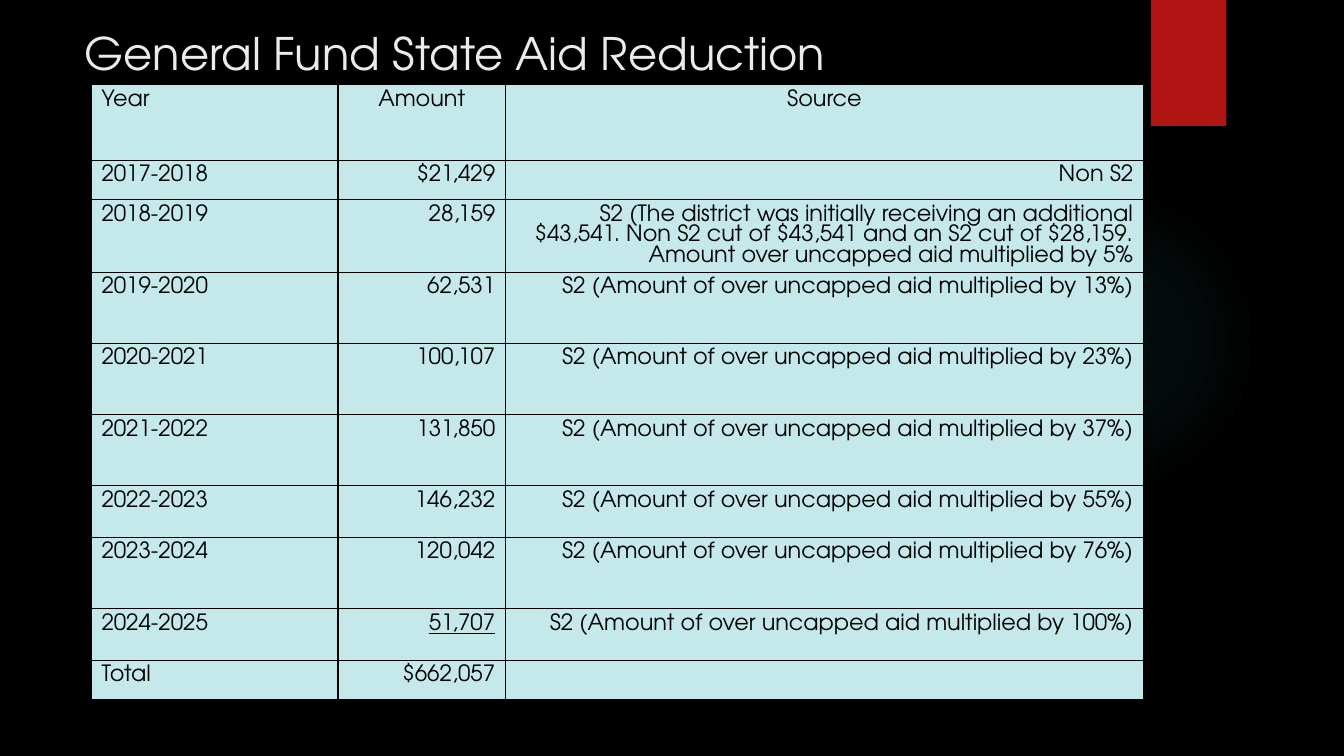
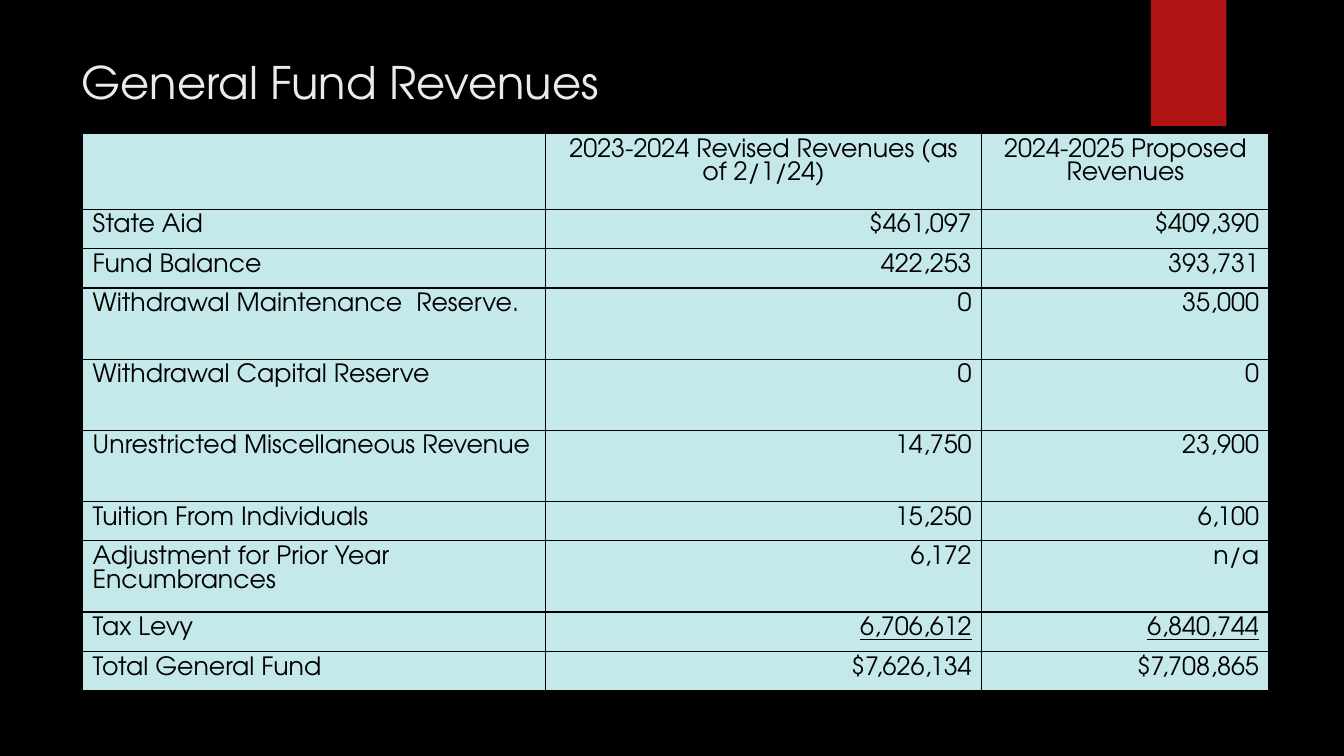
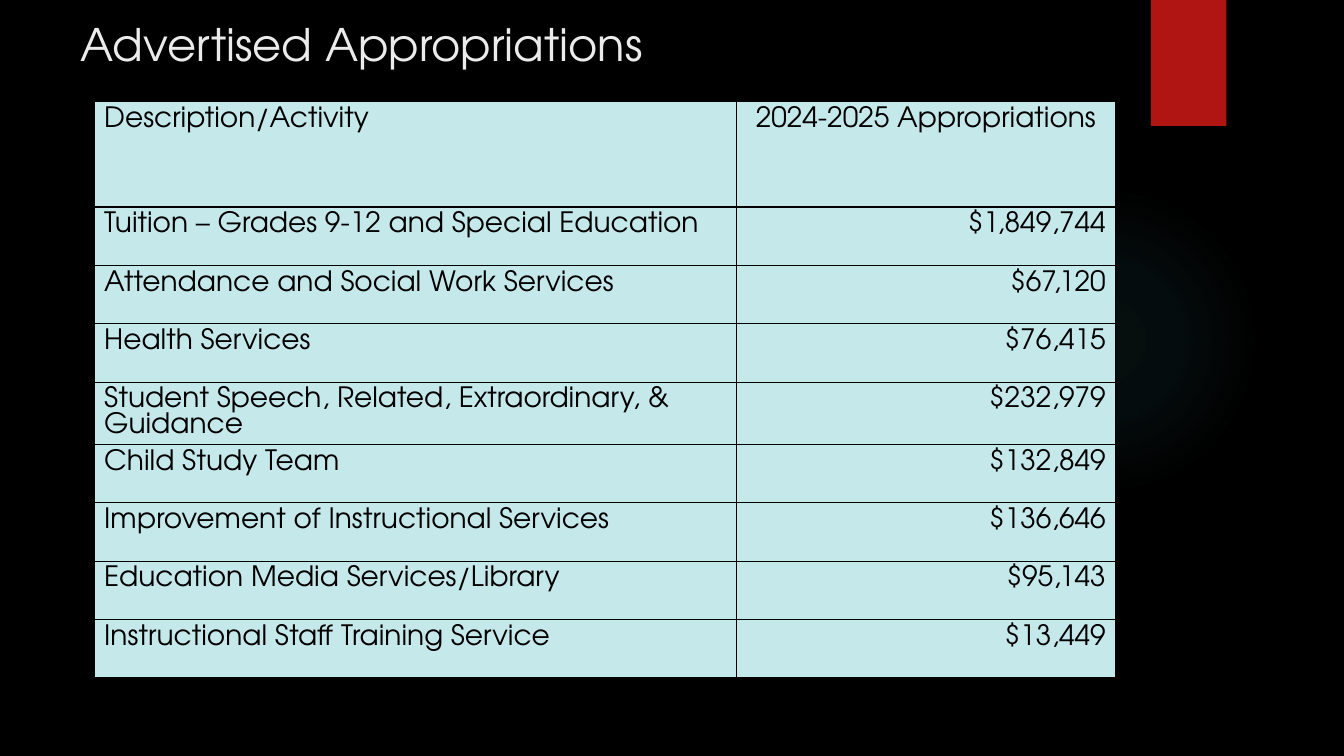
from pptx import Presentation
from pptx.dml.color import RGBColor
from pptx.enum.shapes import MSO_SHAPE
from pptx.enum.text import MSO_ANCHOR, MSO_AUTO_SIZE, PP_ALIGN
from pptx.oxml import parse_xml
from pptx.oxml.ns import nsdecls
from pptx.util import Pt

COLORS = {
    "background": "000000",
    "title": "EBEBEB",
    "ribbon": "B01513",
    "glow": "50B9C1",
    "cell": "C5E8EA",
    "ink": "000000",
}
FONT = "TeX Gyre Adventor"
GLOW_STOPS = [(0, 7), (36, 6), (69, 0), (100, 0)]


def format_text(paragraph, size, color, alignment):
    paragraph.alignment = alignment
    for run in paragraph.runs:
        run.font.name = FONT
        run.font.size = Pt(size)
        run.font.color.rgb = RGBColor.from_string(COLORS[color])


def add_borders(cell):
    properties = cell._tc.get_or_add_tcPr()
    for position, side in enumerate(("lnL", "lnR", "lnT", "lnB")):
        properties.insert(position, parse_xml(
            f'<a:{side} {nsdecls("a")} w="{Pt(1)}"><a:solidFill>'
            f'<a:srgbClr val="{COLORS["ink"]}"/></a:solidFill></a:{side}>'))


reductions = [
    ("2019-2020", "62,531", 13),
    ("2020-2021", "100,107", 23),
    ("2021-2022", "131,850", 37),
    ("2022-2023", "146,232", 55),
    ("2023-2024", "120,042", 76),
    ("2024-2025", "51,707", 100),
]
state_aid = [
    ("Year", "Amount", "Source"),
    ("2017-2018", "$21,429", "Non S2"),
    ("2018-2019", "28,159",
     "S2 (The district was initially receiving an additional $43,541. "
     "Non S2 cut of $43,541 and an S2 cut of $28,159. "
     "Amount over uncapped aid multiplied by 5%"),
    *[(year, amount, f"S2 (Amount of over uncapped aid multiplied by {percent}%)")
      for year, amount, percent in reductions],
    ("Total", "$662,057", ""),
]
revenues = [
    ("", "2023-2024 Revised Revenues (as of 2/1/24)", "2024-2025 Proposed Revenues"),
    ("State Aid", "$461,097", "$409,390"),
    ("Fund Balance", "422,253", "393,731"),
    ("Withdrawal Maintenance  Reserve.", "0", "35,000"),
    ("Withdrawal Capital Reserve", "0", "0"),
    ("Unrestricted Miscellaneous Revenue", "14,750", "23,900"),
    ("Tuition From Individuals", "15,250", "6,100"),
    ("Adjustment for Prior Year Encumbrances", "6,172", "n/a"),
    ("Tax Levy", "6,706,612", "6,840,744"),
    ("Total General Fund", "$7,626,134", "$7,708,865"),
]
appropriations = [
    ("Description/Activity", "2024-2025 Appropriations"),
    ("Tuition – Grades 9-12 and Special Education", "$1,849,744"),
    ("Attendance and Social Work Services", "$67,120"),
    ("Health Services", "$76,415"),
    ("Student Speech, Related, Extraordinary, & Guidance", "$232,979"),
    ("Child Study Team", "$132,849"),
    ("Improvement of Instructional Services", "$136,646"),
    ("Education Media Services/Library", "$95,143"),
    ("Instructional Staff Training Service", "$13,449"),
]
pages = [
    {"title": "General Fund State Aid Reduction", "title_at": (53.3, 14.4),
     "table_at": (65.3, 60.4), "size": 16, "rows": state_aid,
     "widths": [176.2, 119.5, 455.8],
     "heights": [54, 28.1, 52, 50.8, 50.8, 50.8, 37, 50.8, 37, 28],
     "underlined": [(8, 1)]},
    {"title": "General Fund Revenues", "title_at": (51.1, 35.3),
     "table_at": (59, 95.4), "size": 18, "rows": revenues,
     "widths": [330.5, 311.8, 205.2],
     "heights": [54, 28.2, 28.2, 50.8, 50.8, 50.8, 28.2, 50.8, 28.2, 28.2],
     "underlined": [(8, 1), (8, 2)]},
    {"title": "Advertised Appropriations", "title_at": (50.4, 8),
     "table_at": (67.2, 72.7), "size": 20, "rows": appropriations,
     "widths": [458.6, 271.2],
     "heights": [75.2, 41.7, 41.7, 41.7, 44.5, 41.7, 41.7, 41.7, 41.7],
     "underlined": []},
]

deck = Presentation()
deck.slide_width, deck.slide_height = Pt(960), Pt(540)
backdrop = deck.slide_master.background.fill
backdrop.solid()
backdrop.fore_color.rgb = RGBColor.from_string(COLORS["background"])

for page in pages:
    slide = deck.slides.add_slide(deck.slide_layouts[5])

    glow = slide.shapes.add_shape(
        MSO_SHAPE.OVAL, Pt(677.5), Pt(131.8), Pt(221.8), Pt(221.8))
    glow.shadow.inherit = False
    glow.line.fill.background()
    glow.fill.gradient()
    stops = "".join(
        f'<a:gs pos="{position * 1000}"><a:srgbClr val="{COLORS["glow"]}">'
        f'<a:alpha val="{opacity * 1000}"/></a:srgbClr></a:gs>'
        for position, opacity in GLOW_STOPS)
    gradient = glow._element.spPr.find(
        "{http://schemas.openxmlformats.org/drawingml/2006/main}gradFill")
    gradient.getparent().replace(gradient, parse_xml(
        f'<a:gradFill {nsdecls("a")}><a:gsLst>{stops}</a:gsLst>'
        '<a:path path="circle"><a:fillToRect l="50000" t="50000" r="50000" b="50000"/>'
        '</a:path></a:gradFill>'))

    ribbon = slide.shapes.add_shape(MSO_SHAPE.RECTANGLE, Pt(822), 0, Pt(54), Pt(90))
    ribbon.shadow.inherit = False
    ribbon.line.fill.background()
    ribbon.fill.solid()
    ribbon.fill.fore_color.rgb = RGBColor.from_string(COLORS["ribbon"])

    heading = slide.shapes.title
    heading.left, heading.top = [Pt(offset) for offset in page["title_at"]]
    heading.width, heading.height = Pt(741), Pt(110)
    heading.text_frame.text = page["title"]
    heading.text_frame.word_wrap = True
    heading.text_frame.auto_size = MSO_AUTO_SIZE.NONE
    heading.text_frame.vertical_anchor = MSO_ANCHOR.TOP
    format_text(heading.text_frame.paragraphs[0], 32, "title", PP_ALIGN.LEFT)

    left, top = page["table_at"]
    budget = slide.shapes.add_table(
        len(page["rows"]), len(page["widths"]), Pt(left), Pt(top),
        Pt(sum(page["widths"])), Pt(sum(page["heights"]))).table
    budget.first_row = budget.horz_banding = False
    for column, width in zip(budget.columns, page["widths"]):
        column.width = Pt(width)
    for row, height in zip(budget.rows, page["heights"]):
        row.height = Pt(height)

    for row_index, entries in enumerate(page["rows"]):
        for column_index, entry in enumerate(entries):
            cell = budget.cell(row_index, column_index)
            cell.fill.solid()
            cell.fill.fore_color.rgb = RGBColor.from_string(COLORS["cell"])
            add_borders(cell)
            if not entry:
                cell.margin_top = cell.margin_bottom = 0
                continue
            if column_index == 0:
                alignment = PP_ALIGN.LEFT
            else:
                alignment = PP_ALIGN.CENTER if row_index == 0 else PP_ALIGN.RIGHT
            cell.text_frame.text = entry
            paragraph = cell.text_frame.paragraphs[0]
            format_text(paragraph, page["size"], "ink", alignment)
            if (row_index, column_index) in page["underlined"]:
                paragraph.runs[0].font.underline = True

deck.save("out.pptx")
